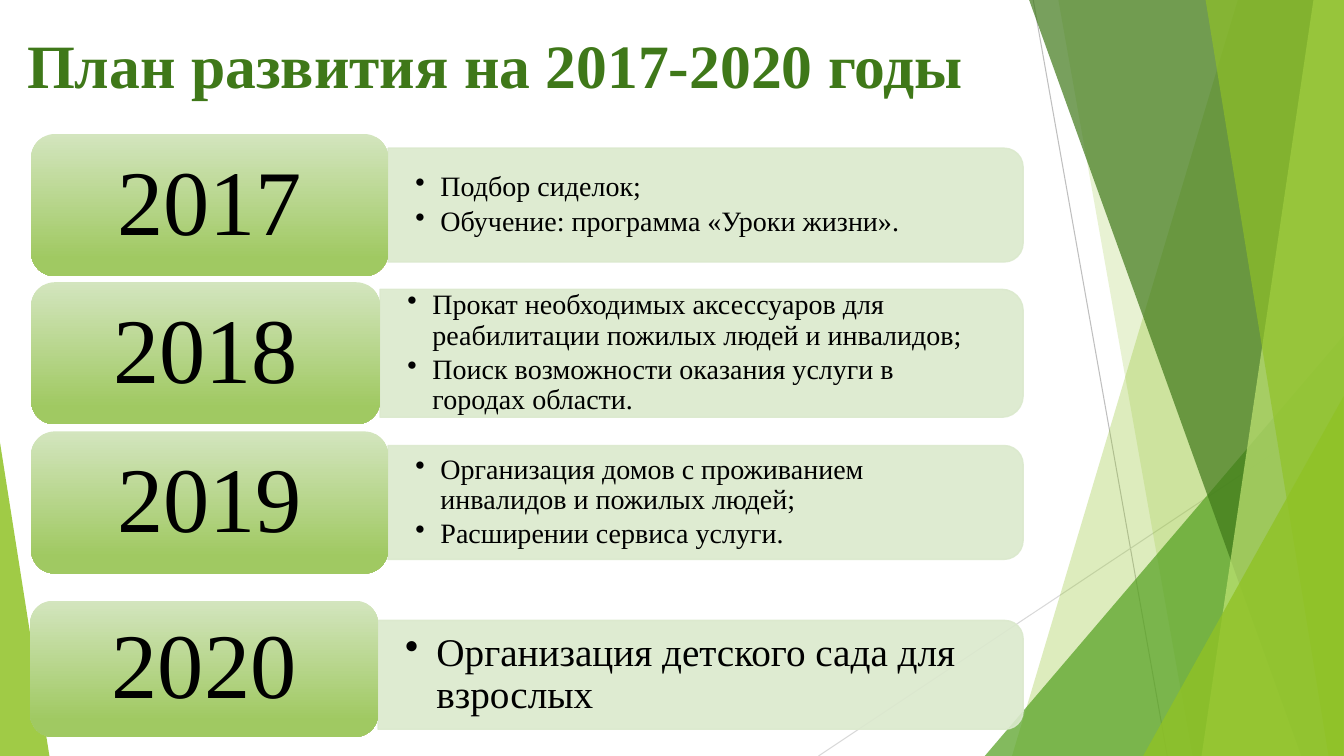
from lxml import etree
from pptx import Presentation
from pptx import util as u
from pptx.dml.color import RGBColor
from pptx.enum import shapes, text
from pptx.oxml import ns

WHITE = RGBColor(0xFF, 0xFF, 0xFF)
BLACK = RGBColor(0x00, 0x00, 0x00)
GRAY = RGBColor(0xBF, 0xBF, 0xBF)
LIGHT_GRAY = RGBColor(0xD9, 0xD9, 0xD9)
LIME = RGBColor(0x90, 0xC2, 0x26)
PALE_LIME = RGBColor(0xC0, 0xE4, 0x74)
GREEN = RGBColor(0x54, 0xA0, 0x21)
DARK_GREEN = RGBColor(0x3F, 0x78, 0x19)
PANEL = RGBColor(0xDB, 0xE9, 0xCD)
YEAR_TOP = RGBColor(0xD3, 0xE5, 0xBE)
YEAR_BOTTOM = RGBColor(0xA0, 0xC9, 0x62)

# The grid: square cells of a tenth of an inch
COLUMNS, ROWS = 133.33, 75
CELL = u.Inches(0.1)


def cells(count):
    return u.Emu(round(count * CELL))


def apply(target, values):
    for name, value in values.items():
        setattr(target, name, value)


class PlanSlide:
    font_name = "Times New Roman"

    def __init__(self, deck):
        self.page = deck.slides.add_slide(deck.slide_layouts[6])
        self.page.background.fill.solid()
        self.page.background.fill.fore_color.rgb = WHITE

    def paint(self, shape, color, opacity, outlined=False):
        shape.shadow.inherit = False
        shape.fill.solid()
        shape.fill.fore_color.rgb = color
        if outlined:
            shape.line.color.rgb = color
            shape.line.width = u.Pt(1)
        else:
            shape.line.fill.background()
        for tint in shape._element.spPr.iter(ns.qn("a:srgbClr")):
            etree.SubElement(tint, ns.qn("a:alpha"), val=str(opacity * 1000))

    def preset(self, kind, left, top, width, height):
        return self.page.shapes.add_shape(kind, *map(cells, (left, top, width, height)))

    def line(self, start, end, color):
        line = self.page.shapes.add_connector(
            shapes.MSO_CONNECTOR.STRAIGHT, *map(cells, start + end))
        line.line.color.rgb = color
        line.line.width = u.Pt(0.75)
        etree.SubElement(line._element.spPr, ns.qn("a:effectLst"))

    def band(self, upper, lower, color, opacity):
        """Area from a slanted edge to the right side of the slide."""
        builder = self.page.shapes.build_freeform(cells(upper), 0)
        corners = [(COLUMNS, 0), (COLUMNS, ROWS), (lower, ROWS)]
        builder.add_line_segments([(cells(x), cells(y)) for x, y in corners])
        self.paint(builder.convert_to_shape(), color, opacity)

    def corner(self, left, top, width, peak, color, opacity):
        """Triangle on the bottom edge; peak is 0 for left, 1 for right."""
        shape = self.preset(shapes.MSO_SHAPE.ISOSCELES_TRIANGLE, left, top, width, ROWS - top)
        shape.adjustments[0] = peak
        self.paint(shape, color, opacity)

    def fill_text(self, frame, lines, size, margins, anchor=text.MSO_ANCHOR.MIDDLE,
                  color=BLACK, bold=False, indent=0, **layout):
        sides = ("margin_left", "margin_top", "margin_right", "margin_bottom")
        apply(frame, {"word_wrap": True, "vertical_anchor": anchor,
                      **dict(zip(sides, map(cells, margins)))})
        for index, words in enumerate(lines):
            para = frame.add_paragraph() if index else frame.paragraphs[0]
            apply(para, layout)
            span = para.add_run()
            span.text = words
            apply(span.font, {"name": self.font_name, "size": u.Pt(size), "bold": bold})
            span.font.color.rgb = color
            if indent:
                settings = para._p.get_or_add_pPr()
                settings.set("marL", str(cells(indent)))
                settings.set("indent", str(-cells(indent)))
                etree.SubElement(settings, ns.qn("a:buChar"), char="•")

    def textbox(self, left, top, width, height):
        return self.page.shapes.add_textbox(*map(cells, (left, top, width, height))).text_frame

    def title(self, words):
        self.fill_text(self.textbox(1.7, 1.6, 95.8, 10.8), [words], 44, (1, 1.1, 1, 0.5),
                       anchor=text.MSO_ANCHOR.TOP, color=DARK_GREEN, bold=True)

    def panel(self, left, middle, right, height, lines, size, indent):
        width = right - left
        # A quarter turn puts the two rounded corners on the right
        shape = self.preset(shapes.MSO_SHAPE.ROUND_2_SAME_RECTANGLE,
                            left + (width - height) / 2, middle - width / 2, height, width)
        shape.rotation = 90
        self.paint(shape, PANEL, 90, outlined=True)
        self.fill_text(self.textbox(left, middle - height / 2, width - 0.6, height), lines, size,
                       (2.7, 1.4, 2.7, 1.4), indent=indent, line_spacing=0.9,
                       space_after=u.Pt(size * 0.15))

    def year(self, left, top, width, height, label):
        shape = self.preset(shapes.MSO_SHAPE.ROUNDED_RECTANGLE, left, top, width, height)
        shape.shadow.inherit = False
        shape.line.fill.background()
        shape.fill.gradient()
        shape.fill.gradient_angle = 270
        stops = ((0, YEAR_TOP), (0.88, YEAR_BOTTOM))
        for stop, (position, color) in zip(shape.fill.gradient_stops, stops):
            stop.position = position
            stop.color.rgb = color
        self.fill_text(shape.text_frame, [label], 66, (2.8, 1.4, 2.8, 1.4),
                       alignment=text.PP_ALIGN.CENTER, line_spacing=0.9)


def main():
    deck = Presentation()
    apply(deck, {"slide_width": cells(COLUMNS), "slide_height": cells(ROWS)})
    slide = PlanSlide(deck)

    # Backdrop
    slide.line((102.5, 0), (115.8, ROWS), GRAY)
    slide.line((COLUMNS, 40.3), (81.2, ROWS), LIGHT_GRAY)
    slide.band(122.8, 100.4, LIME, 30)
    slide.band(105, 118.3, LIME, 20)
    slide.corner(97.7, 33.3, 35.6, 1, GREEN, 72)
    slide.band(102.1, 129.1, DARK_GREEN, 70)
    slide.band(130.3, 119.2, PALE_LIME, 70)
    slide.band(119.6, 131.8, LIME, 65)
    slide.corner(113.4, 39.3, 19.9, 1, LIME, 80)
    slide.corner(0, 43.9, 4.9, 0, LIME, 85)

    slide.title("План развития на 2017-2020 годы")

    # Plan: year, its box, panel height and drop, text size, indent, tasks
    plan = [
        ("2017", (3.1, 13.3, 35.4, 14.1), 11.3, 0, 20, 2.5,
         ["Подбор сиделок;", "Обучение: программа «Уроки жизни»."]),
        ("2018", (3.1, 28, 34.6, 14.1), 12.7, 0, 20, 2.5,
         ["Прокат необходимых аксессуаров для реабилитации пожилых людей и инвалидов;",
          "Поиск возможности оказания услуги в городах области."]),
        ("2019", (3.1, 42.8, 35.4, 14.1), 11.3, 0, 20, 2.5,
         ["Организация домов с проживанием инвалидов и пожилых людей;",
          "Расширении сервиса услуги."]),
        ("2020", (3, 59.6, 34.5, 13.5), 10.8, 0.6, 28, 3.1,
         ["Организация детского сада для взрослых"]),
    ]
    for label, (left, top, width, height), depth, drop, size, indent, tasks in plan:
        slide.panel(left + width, top + height / 2 + drop, 101.5, depth, tasks, size, indent)
        slide.year(left, top, width, height, label)

    deck.save("out.pptx")


if __name__ == "__main__":
    main()
